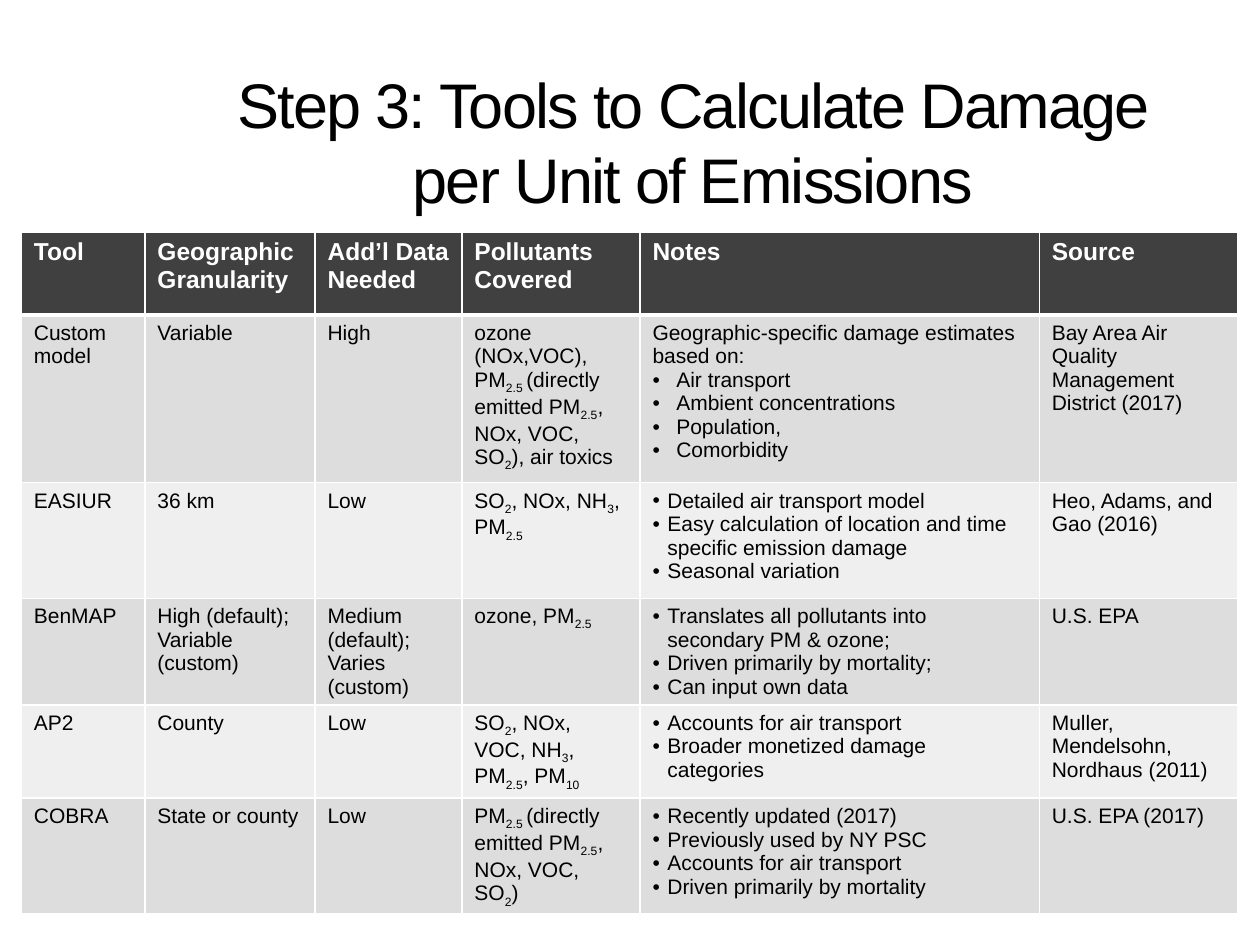
from pptx import Presentation
from pptx.dml.color import RGBColor
from pptx.enum.text import MSO_ANCHOR as Anchor, MSO_AUTO_SIZE as AutoSize, PP_ALIGN as Align
from pptx.oxml.ns import qn
from pptx.util import Cm, Pt
from lxml.etree import SubElement

COLORS = {"ink": "000000", "paper": "FFFFFF", "header": "404040",
          "odd": "DDDDDD", "even": "EFEFEF"}
COLUMN_WIDTHS = [2.49, 3.43, 2.96, 3.59, 8.05, 4.01]
ROW_HEIGHTS = [1.67, 3.38, 2.33, 2.15, 1.88, 2.34]

ROWS = [
    ["Tool", "Geographic Granularity", "Add’l Data Needed", "Pollutants Covered",
     "Notes", "Source"],
    ["Custom model", "Variable", "High",
     "ozone (NOx,VOC), PM_2.5 _(directly emitted PM_2.5_, NOx, VOC, SO_2_), air toxics",
     ["Geographic-specific damage estimates based on:", "•Air transport",
      "•Ambient concentrations", "•Population,", "•Comorbidity"],
     "Bay Area Air Quality Management District (2017)"],
    ["EASIUR", "36 km", "Low", "SO_2_, NOx, NH_3_, PM_2.5_",
     ["•Detailed air transport model",
      "•Easy calculation of location and time specific emission damage",
      "•Seasonal variation"],
     "Heo, Adams, and Gao (2016)"],
    ["BenMAP", ["High (default);", "Variable (custom)"],
     ["Medium (default);", "Varies (custom)"], "ozone, PM_2.5_",
     ["•Translates all pollutants into secondary PM & ozone;",
      "•Driven primarily by mortality;", "•Can input own data"],
     "U.S. EPA"],
    ["AP2", "County", "Low", "SO_2_, NOx, VOC, NH_3_, PM_2.5_, PM_10_",
     ["•Accounts for air transport", "•Broader monetized damage categories"],
     "Muller, Mendelsohn, Nordhaus (2011)"],
    ["COBRA", "State or county", "Low",
     "PM_2.5 _(directly emitted PM_2.5_, NOx, VOC, SO_2_)",
     ["•Recently updated (2017)", "•Previously used by NY PSC",
      "•Accounts for air transport", "•Driven primarily by mortality"],
     "U.S. EPA (2017)"],
]


def write_text(para, text, size=12, color="ink", bold=False, font="Arial",
               align=None, spacing=None, indent=0.3):
    if align is not None:
        para.alignment = align
    if text.startswith("•"):
        text = text[1:]
        props = para._p.get_or_add_pPr()
        props.set("marL", str(Cm(indent)))
        props.set("indent", str(-Cm(indent)))
        SubElement(props, qn("a:buFont")).set("typeface", font)
        SubElement(props, qn("a:buChar")).set("char", "•")
    for index, part in enumerate(text.split("_")):
        if not part:
            continue
        span = para.add_run()
        span.text = part
        span.font.name = font
        span.font.size = Pt(size)
        span.font.bold = bold
        span.font.color.rgb = RGBColor.from_string(COLORS[color])
        if index % 2:
            span.font._element.set("baseline", "-25000")
        if spacing is not None:
            span.font._element.set("spc", str(spacing * 100))


class SlideBuilder:
    def __init__(self, deck):
        self.page = deck.slides.add_slide(deck.slide_layouts[5])

    def title(self, text, left, top, width, height):
        box = self.page.shapes.title
        box.left, box.top, box.width, box.height = map(Cm, (left, top, width, height))
        frame = box.text_frame
        frame.word_wrap = True
        frame.auto_size = AutoSize.NONE
        frame.vertical_anchor = Anchor.MIDDLE
        write_text(frame.paragraphs[0], text, size=36, align=Align.CENTER, spacing=-1)

    def border(self, cell, side, width):
        line = SubElement(cell._tc.get_or_add_tcPr(), qn(f"a:ln{side}"), w=str(Pt(width)))
        fill = SubElement(line, qn("a:solidFill"))
        SubElement(fill, qn("a:srgbClr")).set("val", COLORS["paper"])

    def cell(self, cell, content, fill, bottom=1, top=1, **style):
        for side, width in {"L": 1, "R": 1, "T": top, "B": bottom}.items():
            self.border(cell, side, width)
        cell.fill.solid()
        cell.fill.fore_color.rgb = RGBColor.from_string(COLORS[fill])
        cell.margin_bottom = Cm(0)
        lines = [content] if isinstance(content, str) else content
        frame = cell.text_frame
        for index, line in enumerate(lines):
            para = frame.add_paragraph() if index else frame.paragraphs[0]
            write_text(para, line, **style)

    def table(self, rows, left, top, widths, heights):
        frame = self.page.shapes.add_table(
            len(rows), len(widths), Cm(left), Cm(top), Cm(sum(widths)), Cm(sum(heights)))
        grid = frame.table
        for column, width in zip(grid.columns, widths):
            column.width = Cm(width)
        for number, (row, height, contents) in enumerate(zip(grid.rows, heights, rows)):
            row.height = Cm(height)
            if number == 0:
                style = dict(fill="header", bottom=3, size=14, color="paper", bold=True)
            else:
                style = dict(fill="odd" if number % 2 else "even",
                             top=3 if number == 1 else 1,
                             indent=0.48 if number == 1 else 0.3)
            for cell, content in zip(row.cells, contents):
                self.cell(cell, content, **style)


def main():
    deck = Presentation()
    deck.slide_width, deck.slide_height = Cm(25.4), Cm(19.05)
    builder = SlideBuilder(deck)
    builder.title("Step 3: Tools to Calculate Damage per Unit of Emissions",
                  3.81, 1.47, 20.32, 2.74)
    builder.table(ROWS, 0.43, 4.68, COLUMN_WIDTHS, ROW_HEIGHTS)
    deck.save("out.pptx")


if __name__ == "__main__":
    main()
